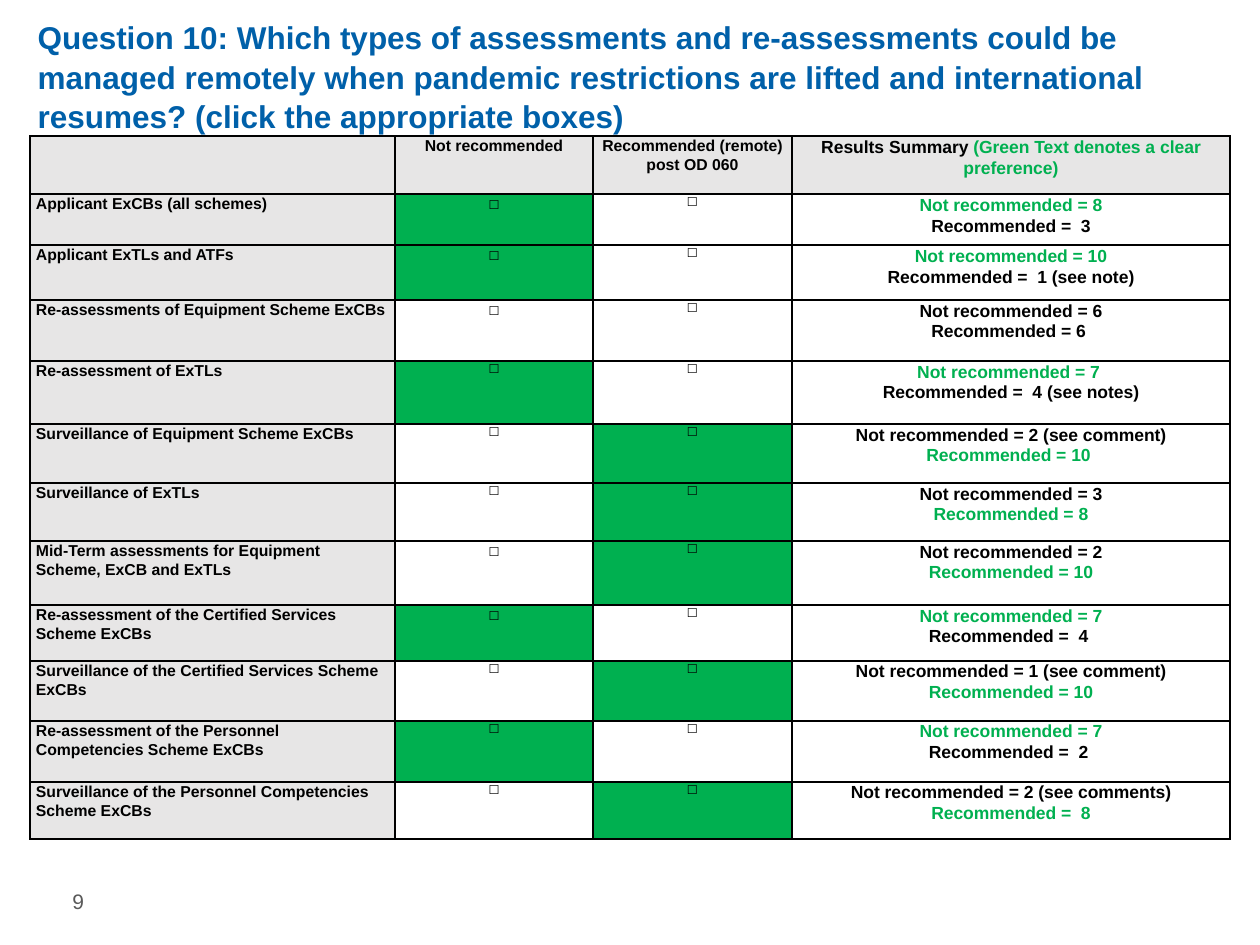
from lxml.etree import SubElement
from pptx import Presentation
from pptx.dml.color import RGBColor
from pptx.enum.text import MSO_ANCHOR, MSO_AUTO_SIZE, PP_ALIGN
from pptx.oxml.ns import qn
from pptx.util import Emu, Pt

# Content
TITLE = ("Question 10: Which types of assessments and re-assessments could be managed remotely "
         "when pandemic restrictions are lifted and international resumes? "
         "(click the appropriate boxes)")
PAGE_NUMBER = "9"
HEADERS = ["", "Not recommended", "Recommended (remote) post OD 060"]
SUMMARY_HEADER = ("Results Summary ", "(Green Text denotes a clear preference)")
BOX = "☐"
NOT_RECOMMENDED, RECOMMENDED, NO_PREFERENCE = 0, 1, None
CJK, LATIN = "Noto Sans CJK JP", "Roboto"

# Assessment, preference, font of the first box, results, row height in px
ROWS = [
    ("Applicant ExCBs (all schemes)", NOT_RECOMMENDED, CJK,
     ("Not recommended = 8", "Recommended =  3"), 51),
    ("Applicant ExTLs and ATFs", NOT_RECOMMENDED, CJK,
     ("Not recommended = 10", "Recommended =  1 (see note)"), 55),
    ("Re-assessments of Equipment Scheme ExCBs", NO_PREFERENCE, CJK,
     ("Not recommended = 6", "Recommended = 6 "), 61),
    ("Re-assessment of ExTLs", NOT_RECOMMENDED, LATIN,
     ("Not recommended = 7 ", "Recommended =  4 (see notes)"), 63),
    ("Surveillance of Equipment Scheme ExCBs", RECOMMENDED, LATIN,
     ("Not recommended = 2 (see comment)", "Recommended = 10 "), 59),
    ("Surveillance of ExTLs", RECOMMENDED, LATIN,
     ("Not recommended = 3", "Recommended = 8"), 58),
    ("Mid-Term assessments for Equipment Scheme, ExCB and ExTLs", RECOMMENDED, CJK,
     ("Not recommended = 2", "Recommended = 10"), 64),
    ("Re-assessment of the Certified Services Scheme ExCBs", NOT_RECOMMENDED, CJK,
     ("Not recommended = 7", "Recommended =  4 "), 56),
    ("Surveillance of the Certified Services Scheme ExCBs", RECOMMENDED, LATIN,
     ("Not recommended = 1 (see comment)", "Recommended = 10"), 60),
    ("Re-assessment of the Personnel Competencies Scheme ExCBs", NOT_RECOMMENDED, LATIN,
     ("Not recommended = 7", "Recommended =  2 "), 61),
    ("Surveillance of the Personnel Competencies Scheme ExCBs", RECOMMENDED, LATIN,
     ("Not recommended = 2 (see comments)", "Recommended =  8"), 57),
]

# Layout and colours
COLUMN_WIDTHS = [365, 198, 199, 438]
HEADER_HEIGHT = 58
BLACK = RGBColor(0x00, 0x00, 0x00)
WHITE = RGBColor(0xFF, 0xFF, 0xFF)
GREEN = RGBColor(0x00, 0xB0, 0x50)
GREY = RGBColor(0xE7, 0xE6, 0xE6)
BLUE = RGBColor(0x00, 0x60, 0xA9)
DARK_GREY = RGBColor(0x59, 0x59, 0x59)


def px(count):
    return Emu(round(count * 914400 / 126))


def style(run, size, color=BLACK, bold=True, name="Arial"):
    font = run.font
    font.size, font.bold, font.name = Pt(size), bold, name
    font.color.rgb = color
    if name == CJK:
        SubElement(run._r.get_or_add_rPr(), qn("a:ea")).set("typeface", name)


def add_borders(cell):
    properties = cell._tc.get_or_add_tcPr()
    for side in ("L", "R", "T", "B"):
        line = SubElement(properties, qn(f"a:ln{side}"), w=str(Pt(1)))
        fill = SubElement(line, qn("a:solidFill"))
        SubElement(fill, qn("a:srgbClr"), val=str(BLACK))


def fill_cell(cell, lines, fill, size, align=PP_ALIGN.CENTER, **look):
    """Each line is a list of (text, color) runs."""
    add_borders(cell)
    cell.fill.solid()
    cell.fill.fore_color.rgb = fill
    cell.margin_left = cell.margin_right = px(6)
    cell.margin_top = cell.margin_bottom = 0
    frame = cell.text_frame
    for index, line in enumerate(lines):
        paragraph = frame.add_paragraph() if index else frame.paragraphs[0]
        paragraph.alignment = align
        paragraph.line_spacing = 1.07
        for text, color in line:
            run = paragraph.add_run()
            run.text = text
            style(run, size, color, **look)


presentation = Presentation()
presentation.slide_width, presentation.slide_height = px(1260), px(945)
slide = presentation.slides.add_slide(presentation.slide_layouts[5])

# Title
title = slide.shapes.title
title.left, title.top, title.width, title.height = px(25), px(11), px(1201), px(129)
title.text_frame.text = TITLE
title.text_frame.auto_size = MSO_AUTO_SIZE.NONE
title.text_frame.vertical_anchor = MSO_ANCHOR.MIDDLE
heading = title.text_frame.paragraphs[0]
heading.alignment = PP_ALIGN.LEFT
heading.line_spacing = 1.05
style(heading.runs[0], 18, BLUE)

# Results table
heights = [HEADER_HEIGHT] + [row[-1] for row in ROWS]
table = slide.shapes.add_table(len(heights), len(COLUMN_WIDTHS), px(30), px(136),
                               px(sum(COLUMN_WIDTHS)), px(sum(heights))).table
table.first_row = table.horz_banding = False
for column, width in zip(table.columns, COLUMN_WIDTHS):
    column.width = px(width)
for table_row, height in zip(table.rows, heights):
    table_row.height = px(height)

# Header row
for index, text in enumerate(HEADERS):
    fill_cell(table.cell(0, index), [[(text, BLACK)]] if text else [], GREY, 9)
fill_cell(table.cell(0, 3), [list(zip(SUMMARY_HEADER, (BLACK, GREEN)))], GREY, 10)

# One row per assessment: the preferred option is green
for index, (label, preference, box_font, results, _) in enumerate(ROWS, start=1):
    fill_cell(table.cell(index, 0), [[(label, BLACK)]], GREY, 9, PP_ALIGN.LEFT)
    for option, font_name in enumerate((box_font, LATIN)):
        fill_cell(table.cell(index, option + 1), [[(BOX, BLACK)]],
                  GREEN if option == preference else WHITE, 7, bold=False, name=font_name)
    lines = [[(text, GREEN if option == preference else BLACK)]
             for option, text in enumerate(results)]
    fill_cell(table.cell(index, 3), lines, WHITE, 10)

# Page number
number = slide.shapes.add_textbox(px(60), px(876), px(110), px(50))
number.text_frame.text = PAGE_NUMBER
number.text_frame.word_wrap = True
number.text_frame.vertical_anchor = MSO_ANCHOR.MIDDLE
style(number.text_frame.paragraphs[0].runs[0], 12, DARK_GREY, bold=False)

presentation.save("out.pptx")
